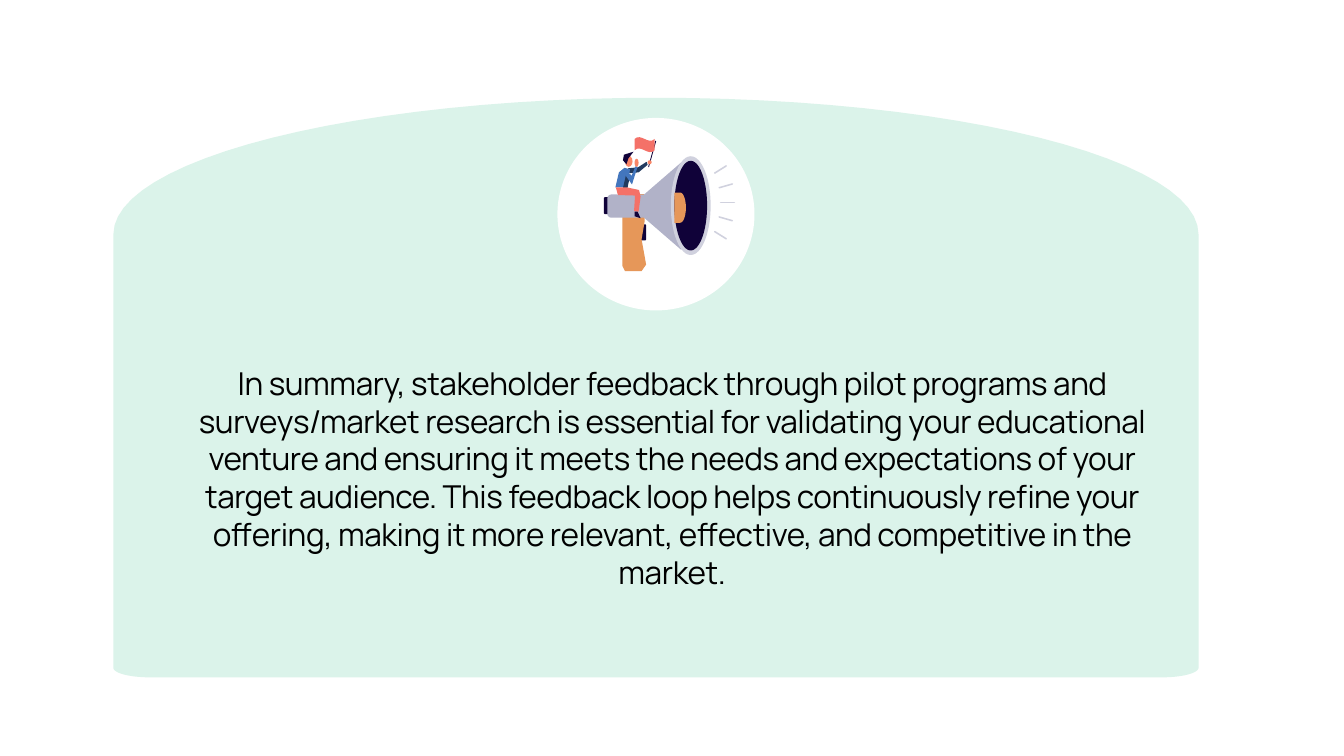
"""Builds the closing summary slide: an arched panel with a megaphone emblem."""
import math

from lxml import etree
from pptx import Presentation
from pptx.dml.color import RGBColor
from pptx.enum.shapes import MSO_CONNECTOR, MSO_SHAPE
from pptx.enum.text import PP_ALIGN
from pptx.oxml.ns import qn
from pptx.util import Pt

OVAL = MSO_SHAPE.OVAL
ROUNDED = MSO_SHAPE.ROUNDED_RECTANGLE
HALF_ROUND = MSO_SHAPE.FLOWCHART_DELAY
WAVE = MSO_SHAPE.WAVE
STRAIGHT = MSO_CONNECTOR.STRAIGHT
CENTER = PP_ALIGN.CENTER

WHITE = RGBColor(0xFF, 0xFF, 0xFF)
BLACK = RGBColor(0x00, 0x00, 0x00)
MINT = RGBColor(0xDB, 0xF3, 0xEA)
INDIGO = RGBColor(0x10, 0x02, 0x39)
ORANGE = RGBColor(0xE6, 0x97, 0x59)
SILVER = RGBColor(0xD0, 0xD1, 0xDE)
STEEL = RGBColor(0xB1, 0xB2, 0xC8)
SKIN = RGBColor(0xF8, 0x86, 0x67)
NAVY = RGBColor(0x22, 0x3B, 0x5F)
BLUE = RGBColor(0x43, 0x76, 0xBD)
CORAL = RGBColor(0xF4, 0x71, 0x68)

ART_LEFT, ART_TOP, ART_UNIT = 856.8, 194.4, 0.72
ARC_STEPS = 24

SUMMARY = (
    "In summary, stakeholder feedback through pilot programs and surveys/market research is "
    "essential for validating your educational venture and ensuring it meets the needs and "
    "expectations of your target audience. This feedback loop helps continuously refine your "
    "offering, making it more relevant, effective, and competitive in the market."
)

HANDLE = [(45, 115), (88, 115), (89, 170), (83, 205), (92, 255), (83, 268), (50, 268), (45, 258)]
HORN = [(162, 52), (88, 116), (88, 162), (162, 226)]
FAR_ARM = [(56, 64), (76, 62), (93, 51), (95, 57), (77, 72), (56, 74)]
TORSO = [(31, 102), (38, 72), (49, 63), (60, 66), (55, 102)]
TORSO_SHADE = [(46, 103), (52, 78), (60, 79), (55, 103)]
NEAR_ARM = [(51, 78), (60, 75), (63, 79), (71, 60), (75, 61), (64, 96)]
LEGS = [(32, 102), (55, 102), (78, 107), (81, 120), (77, 150), (68, 149), (70, 118), (36, 117)]
SHOE = [(69, 150), (75, 150), (81, 163), (69, 159)]
HAIR = [(46, 48), (48, 37), (67, 31), (57, 44), (53, 56)]


class SlideBuilder:
    """Holds the style and the current slide, and draws each kind of element."""

    font_name = "Manrope"
    font_size = 45
    letter_spacing = -0.6

    def __init__(self, slide):
        self.slide = slide
        self.shapes = slide.shapes

    def start_group(self):
        """Sends the elements that follow into a new group."""
        self.shapes = self.slide.shapes.add_group_shape().shapes

    def paint(self, shape, color):
        """Gives a shape a plain fill without line or shadow."""
        shape.shadow.inherit = False
        shape.fill.solid()
        shape.fill.fore_color.rgb = color
        shape.line.fill.background()

    def outline(self, color, points):
        """Draws a closed outline through the points."""
        corners = [(Pt(x), Pt(y)) for x, y in points]
        builder = self.shapes.build_freeform(*corners[0])
        builder.add_line_segments(corners[1:], close=True)
        self.paint(builder.convert_to_shape(), color)

    def arch(self, color, left, top, width, height, rise, foot_width, foot_height):
        """Draws a panel with an elliptical top and small elliptical bottom corners."""
        middle = left + width / 2
        half = []
        for bottom, radius_x, radius_y in ((False, width / 2, rise), (True, foot_width, foot_height)):
            for index in range(ARC_STEPS + 1):
                angle = math.pi / 2 * (index / ARC_STEPS + bottom)
                x = width / 2 - radius_x + radius_x * math.sin(angle)
                base = height - radius_y if bottom else radius_y
                half.append((x, top + base - radius_y * math.cos(angle)))
        self.outline(color, [(middle + x, y) for x, y in half]
                     + [(middle - x, y) for x, y in reversed(half)])

    def preset(self, kind, color, left, top, width, height):
        """Draws a filled preset shape."""
        shape = self.shapes.add_shape(kind, Pt(left), Pt(top), Pt(width), Pt(height))
        self.paint(shape, color)

    def line(self, color, start, end, width):
        """Draws a straight line with round ends."""
        line = self.shapes.add_connector(STRAIGHT, *(Pt(value) for value in (*start, *end)))
        line.line.color.rgb = color
        line.line.width = Pt(width)
        properties = line._element.spPr
        properties.find(qn("a:ln")).set("cap", "rnd")
        etree.SubElement(properties, qn("a:effectLst"))

    def text(self, content, left, top, width, height):
        """Writes a centred paragraph."""
        frame = self.shapes.add_textbox(Pt(left), Pt(top), Pt(width), Pt(height)).text_frame
        frame.word_wrap = True
        frame.margin_left = frame.margin_right = frame.margin_top = frame.margin_bottom = Pt(3.6)
        frame.text = content
        para = frame.paragraphs[0]
        para.alignment = CENTER
        for span in para.runs:
            span.font.name = self.font_name
            span.font.size = Pt(self.font_size)
            span.font.color.rgb = BLACK
            span._r.get_or_add_rPr().set("spc", str(round(self.letter_spacing * 100)))


def place(x, y):
    """Turns a point of the emblem into slide points."""
    return ART_LEFT + x * ART_UNIT, ART_TOP + y * ART_UNIT


def draw_part(page, kind, color, x, y, width, height):
    """Draws a preset shape of the emblem."""
    page.preset(kind, color, *place(x, y), width * ART_UNIT, height * ART_UNIT)


def draw_outline(page, color, points):
    """Draws an outline of the emblem."""
    page.outline(color, [place(x, y) for x, y in points])


def draw_megaphone(page):
    """Draws the megaphone with its sound rays."""
    draw_part(page, ROUNDED, INDIGO, 8, 121, 18, 34)
    draw_part(page, ROUNDED, INDIGO, 78, 175, 14, 32)
    draw_outline(page, ORANGE, HANDLE)
    draw_part(page, ROUNDED, STEEL, 15, 116, 80, 46)
    draw_outline(page, STEEL, HORN)
    draw_part(page, OVAL, SILVER, 141, 40, 79, 196)
    draw_part(page, OVAL, INDIGO, 148, 49, 65, 178)
    draw_part(page, HALF_ROUND, ORANGE, 148, 112, 23, 60)
    for step in range(-2, 3):
        x, y = 240 - 3 * step ** 2, 131.5 + 29 * step
        angle = math.radians(16 * step)
        end = place(x + 27 * math.cos(angle), y + 27 * math.sin(angle))
        page.line(SILVER, place(x, y), end, 2.2)


def draw_speaker(page):
    """Draws the seated speaker with the flag."""
    for color, points in ((NAVY, FAR_ARM), (BLUE, TORSO), (NAVY, TORSO_SHADE), (BLUE, NEAR_ARM),
                          (CORAL, LEGS), (INDIGO, SHOE)):
        draw_outline(page, color, points)
    draw_part(page, OVAL, SKIN, 50, 39, 15, 22)
    draw_outline(page, INDIGO, HAIR)
    draw_part(page, OVAL, SKIN, 69, 45, 8, 16)
    page.line(INDIGO, place(97, 61), place(111, 10), 1.2)
    draw_part(page, WAVE, CORAL, 69, 2, 40, 30)
    draw_part(page, OVAL, SKIN, 95, 48, 8, 8)


def main():
    """Builds and saves the deck."""
    deck = Presentation()
    deck.slide_width, deck.slide_height = Pt(1920), Pt(1080)
    page = SlideBuilder(deck.slides.add_slide(deck.slide_layouts[6]))
    page.arch(MINT, 162, 139.7, 1550.2, 828, 195, 52.5, 13.7)
    page.text(SUMMARY, 261.4, 516.2, 1397.5, 410.4)
    page.start_group()
    page.preset(OVAL, WHITE, 796.3, 168.5, 281.5, 275)
    draw_megaphone(page)
    draw_speaker(page)
    deck.save("out.pptx")


if __name__ == "__main__":
    main()
